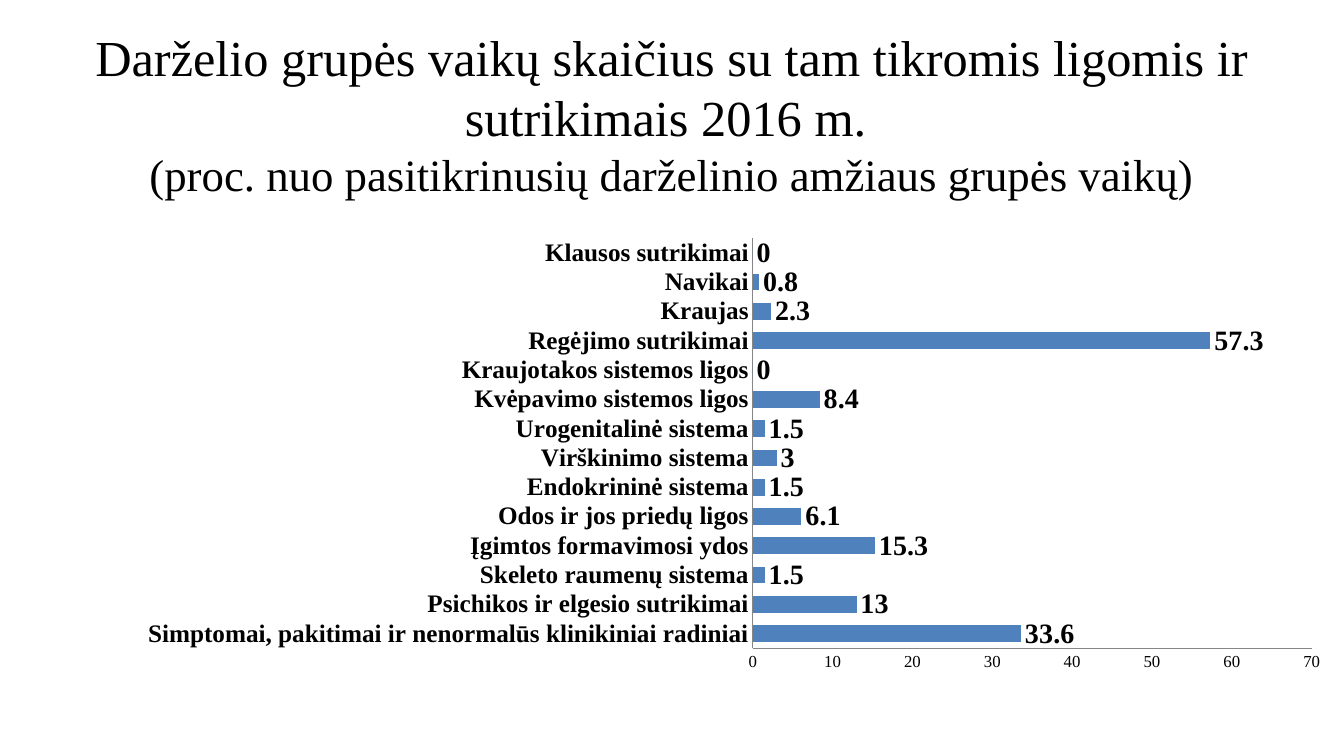
from lxml import etree
from pptx import Presentation
from pptx.chart.data import CategoryChartData
from pptx.dml.color import RGBColor
from pptx.enum.chart import XL_CHART_TYPE, XL_LABEL_POSITION, XL_TICK_MARK
from pptx.enum.text import MSO_ANCHOR, MSO_AUTO_SIZE, PP_ALIGN
from pptx.oxml.ns import qn
from pptx.util import Pt

BAR = XL_CHART_TYPE.BAR_CLUSTERED
OUT_END = XL_LABEL_POSITION.OUTSIDE_END
NO_TICK = XL_TICK_MARK.NONE
MIDDLE = MSO_ANCHOR.MIDDLE
NO_FIT = MSO_AUTO_SIZE.NONE
CENTER = PP_ALIGN.CENTER

BLACK = RGBColor(0x00, 0x00, 0x00)
BLUE = RGBColor(0x4F, 0x81, 0xBD)
GRAY = RGBColor(0x86, 0x86, 0x86)
SERIF = "Times New Roman"
TITLE_ONLY = 5

HEAD = (
    ("Darželio grupės vaikų skaičius su tam tikromis ligomis ir sutrikimais 2016 m. ", 36),
    ("(proc. nuo pasitikrinusių darželinio amžiaus grupės vaikų)", 32),
)
RATES = (
    ("Simptomai, pakitimai ir nenormalūs klinikiniai radiniai", 33.6),
    ("Psichikos ir elgesio sutrikimai", 13),
    ("Skeleto raumenų sistema", 1.5),
    ("Įgimtos formavimosi ydos", 15.3),
    ("Odos ir jos priedų ligos", 6.1),
    ("Endokrininė sistema", 1.5),
    ("Virškinimo sistema", 3),
    ("Urogenitalinė sistema", 1.5),
    ("Kvėpavimo sistemos ligos", 8.4),
    ("Kraujotakos sistemos ligos", 0),
    ("Regėjimo sutrikimai", 57.3),
    ("Kraujas", 2.3),
    ("Navikai", 0.8),
    ("Klausos sutrikimai", 0),
)
PLOT = (("layoutTarget", "inner"), ("xMode", "edge"), ("yMode", "edge"),
        ("x", 0.56), ("y", 0.03), ("w", 0.425), ("h", 0.79))


def set_font(font, size, name=SERIF, bold=False):
    """Give a font its size, face, weight and black colour."""
    font.size, font.name, font.bold = Pt(size), name, bold
    font.color.rgb = BLACK


def add_title(slide, left, top, width, height):
    """Place the two-part heading in the title placeholder."""
    title = slide.shapes.title
    title.left, title.top = Pt(left), Pt(top)
    title.width, title.height = Pt(width), Pt(height)
    frame = title.text_frame
    frame.word_wrap, frame.auto_size = True, NO_FIT
    frame.vertical_anchor = MIDDLE
    para = frame.paragraphs[0]
    para.alignment = CENTER
    para.font.name = SERIF
    para.font.color.rgb = BLACK
    for index, (text, size) in enumerate(HEAD):
        if index:
            para.add_line_break()
        run = para.add_run()
        run.text = text
        run.font.size = Pt(size)
        run.font.name = SERIF


def set_plot(chart):
    """Fix the inner plot area as shares of the chart box."""
    area = chart.element.find(".//" + qn("c:plotArea"))
    old = area.find(qn("c:layout"))
    if old is not None:
        area.remove(old)
    layout = etree.Element(qn("c:layout"))
    manual = etree.SubElement(layout, qn("c:manualLayout"))
    for tag, value in PLOT:
        etree.SubElement(manual, qn("c:" + tag)).set("val", str(value))
    area.insert(0, layout)


def add_rates(slide, left, top, width, height):
    """Draw the bar chart of disease rates."""
    data = CategoryChartData(number_format="General")
    names, values = zip(*RATES)
    data.categories = names
    data.add_series("Series 1", values)
    frame = slide.shapes.add_chart(
        BAR, Pt(left), Pt(top), Pt(width), Pt(height), data)
    chart = frame.chart
    chart.has_legend = chart.has_title = False
    set_font(chart.font, 18, "Calibri")
    set_plot(chart)
    for axis, size, bold in ((chart.category_axis, 18, True),
                             (chart.value_axis, 12, False)):
        axis.has_major_gridlines = False
        axis.major_tick_mark = axis.minor_tick_mark = NO_TICK
        axis.format.line.color.rgb = GRAY
        axis.format.line.width = Pt(0.75)
        set_font(axis.tick_labels.font, size, bold=bold)
    scale = chart.value_axis
    scale.minimum_scale, scale.maximum_scale, scale.major_unit = 0, 70, 10
    plot = chart.plots[0]
    plot.gap_width, plot.vary_by_categories = 75, False
    bars = plot.series[0]
    bars.format.fill.solid()
    bars.format.fill.fore_color.rgb = BLUE
    labels = bars.data_labels
    labels.show_value, labels.position = True, OUT_END
    set_font(labels.font, 20, bold=True)


def main():
    """Build and save the slide."""
    deck = Presentation()
    deck.slide_width, deck.slide_height = Pt(960), Pt(540)
    slide = deck.slides.add_slide(deck.slide_layouts[TITLE_ONLY])
    add_title(slide, 48, 21.6, 864, 118.8)
    add_rates(slide, 11.5, 159, 939.6, 371)
    deck.save("out.pptx")


if __name__ == "__main__":
    main()
